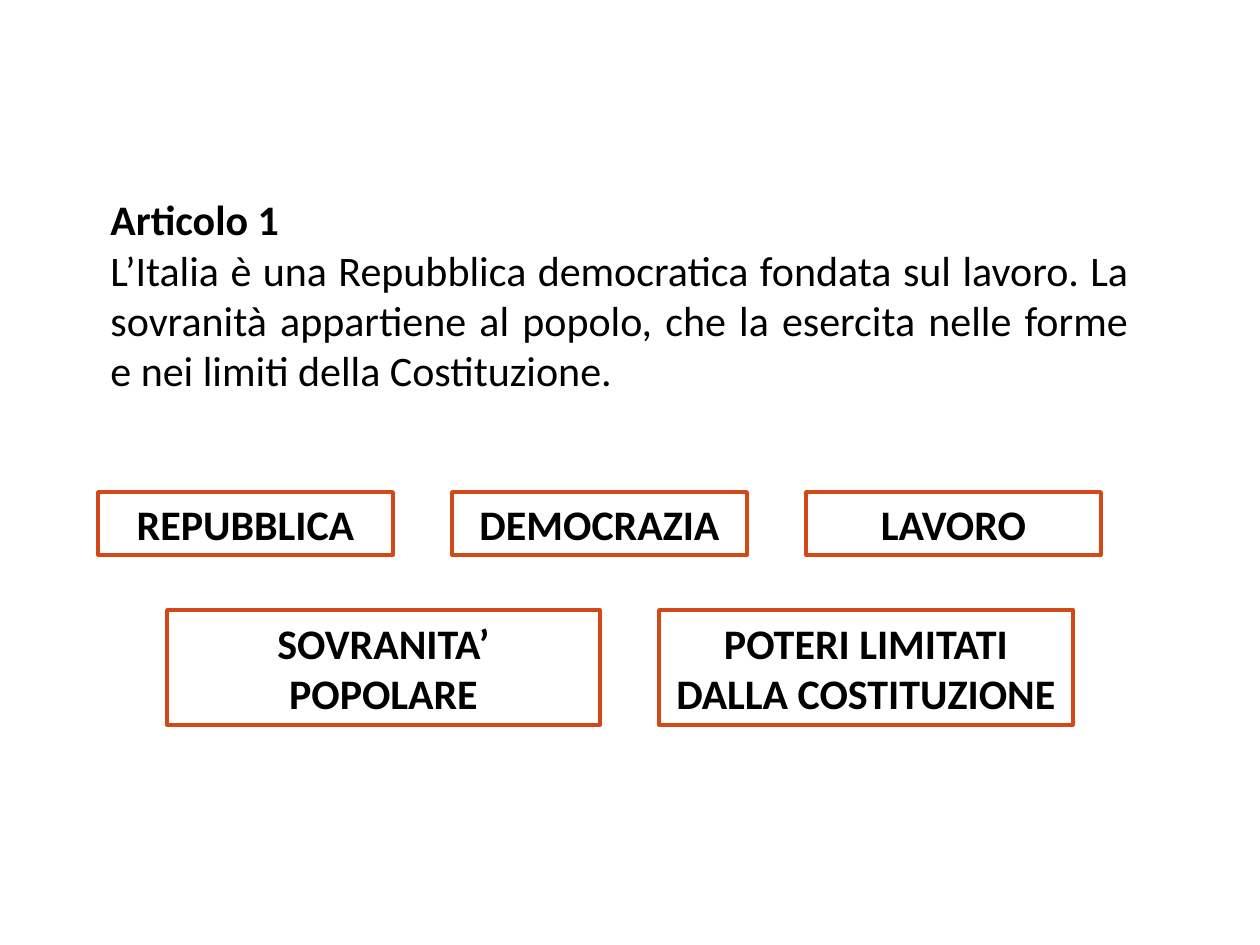
import dataclasses

import pptx
import pptx.dml.color
import pptx.enum.shapes
import pptx.enum.text
import pptx.slide
import pptx.util

PX = 914400 // 126  # EMU in one px
ALIGN = pptx.enum.text.PP_ALIGN


@dataclasses.dataclass(frozen=True)
class Theme:
    font: str = "Calibri"
    size: int = 24
    edge: int = 2
    ink: str = "000000"
    paper: str = "FFFFFF"
    accent: str = "D34817"


@dataclasses.dataclass(frozen=True)
class Box:
    text: str
    left: int
    top: int
    width: int
    height: int


THEME = Theme()
GAP = 59

ARTICLE = Box(
    "Articolo 1\n"
    "L’Italia è una Repubblica democratica fondata sul lavoro. "
    "La sovranità appartiene al popolo, che la esercita nelle forme "
    "e nei limiti della Costituzione.",
    98, 186, 1043, 217)


def color(code: str) -> pptx.dml.color.RGBColor:
    return pptx.dml.color.RGBColor.from_string(code)


def make_row(left: int, top: int, height: int,
             items: list[tuple[str, int]]) -> list[Box]:
    """Place boxes side by side with equal gaps."""
    boxes = []
    for text, width in items:
        boxes.append(Box(text, left, top, width, height))
        left += width + GAP
    return boxes


def draw_box(slide: pptx.slide.Slide, box: Box, edge: str,
             align: ALIGN, bold_all: bool = True) -> None:
    """Draw a framed text; only its first paragraph is bold unless bold_all."""
    shape = slide.shapes.add_shape(
        pptx.enum.shapes.MSO_SHAPE.RECTANGLE,
        *(n * PX for n in (box.left, box.top, box.width, box.height)))
    shape.shadow.inherit = False
    shape.fill.solid()
    shape.fill.fore_color.rgb = color(THEME.paper)
    shape.line.color.rgb = color(edge)
    shape.line.width = pptx.util.Pt(THEME.edge)

    frame = shape.text_frame
    frame.word_wrap = True
    frame.auto_size = pptx.enum.text.MSO_AUTO_SIZE.SHAPE_TO_FIT_TEXT
    frame.text = box.text
    for i, para in enumerate(frame.paragraphs):
        para.alignment = align
        for run in para.runs:
            run.font.name = THEME.font
            run.font.size = pptx.util.Pt(THEME.size)
            run.font.bold = bold_all or i == 0
            run.font.color.rgb = color(THEME.ink)


def main() -> None:
    deck = pptx.Presentation()
    deck.slide_width = 1260 * PX
    deck.slide_height = 945 * PX
    slide = deck.slides.add_slide(deck.slide_layouts[6])

    # Article text
    draw_box(slide, ARTICLE, THEME.paper, ALIGN.JUSTIFY, bold_all=False)

    # Key principles in two rows
    words = ["REPUBBLICA", "DEMOCRAZIA", "LAVORO"]
    upper = make_row(98, 492, 63, [(word, 295) for word in words])
    lower = make_row(167, 610, 115, [
        ("SOVRANITA’ POPOLARE", 433),
        ("POTERI LIMITATI DALLA COSTITUZIONE", 414),
    ])
    for box in upper + lower:
        draw_box(slide, box, THEME.accent, ALIGN.CENTER)

    deck.save("out.pptx")


if __name__ == "__main__":
    main()
